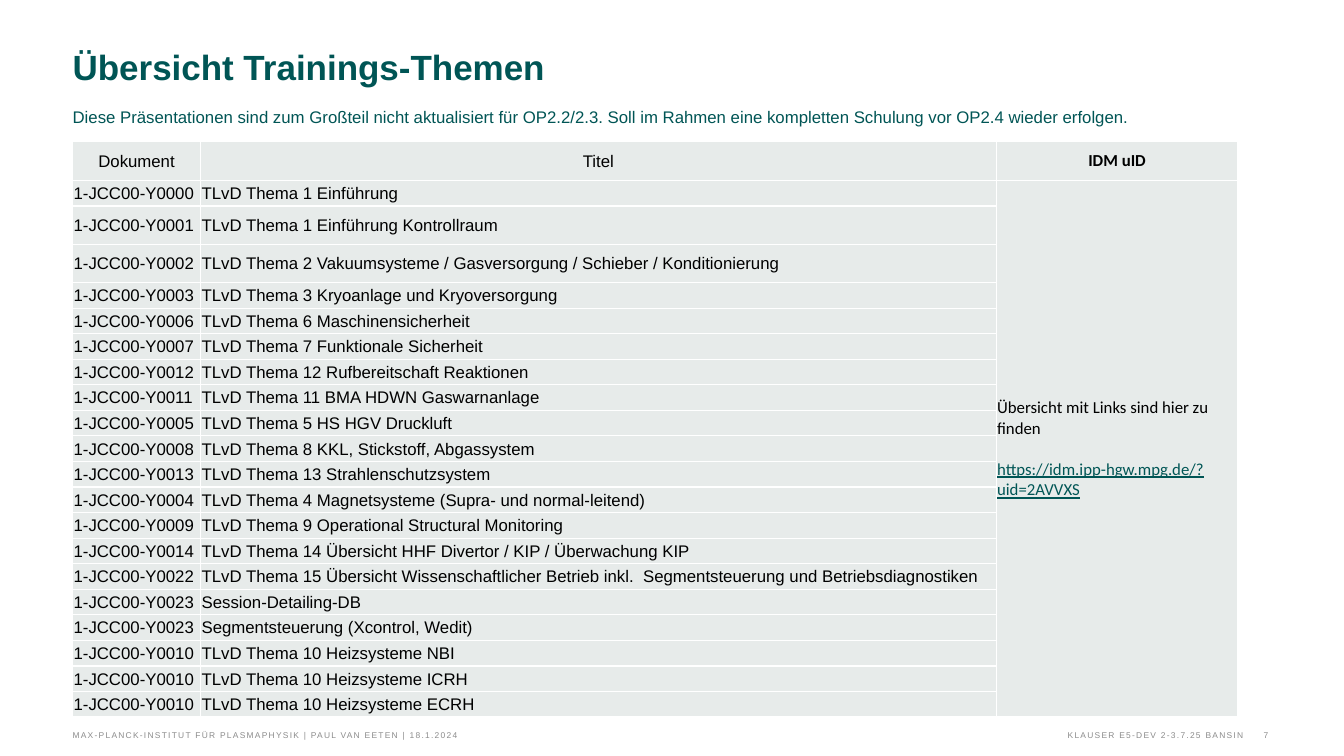
from lxml import etree
from pptx import Presentation
from pptx.dml.color import RGBColor
from pptx.enum.text import MSO_ANCHOR as Anchor, PP_ALIGN as Align
from pptx.oxml.ns import qn
from pptx.util import Inches, Pt

# Content
TITLE = "Übersicht Trainings-Themen"
SUBTITLE = ("Diese Präsentationen sind zum Großteil nicht aktualisiert für OP2.2/2.3. "
            "Soll im Rahmen eine kompletten Schulung vor OP2.4 wieder erfolgen.")
HEADERS = ["Dokument", "Titel", "IDM uID"]
TOPICS = [
    ("1-JCC00-Y0000", "TLvD Thema 1 Einführung"),
    ("1-JCC00-Y0001", "TLvD Thema 1 Einführung Kontrollraum"),
    ("1-JCC00-Y0002", "TLvD Thema 2 Vakuumsysteme / Gasversorgung / Schieber / Konditionierung"),
    ("1-JCC00-Y0003", "TLvD Thema 3 Kryoanlage und Kryoversorgung"),
    ("1-JCC00-Y0006", "TLvD Thema 6 Maschinensicherheit"),
    ("1-JCC00-Y0007", "TLvD Thema 7 Funktionale Sicherheit"),
    ("1-JCC00-Y0012", "TLvD Thema 12 Rufbereitschaft Reaktionen"),
    ("1-JCC00-Y0011", "TLvD Thema 11 BMA HDWN Gaswarnanlage"),
    ("1-JCC00-Y0005", "TLvD Thema 5 HS HGV Druckluft"),
    ("1-JCC00-Y0008", "TLvD Thema 8 KKL, Stickstoff, Abgassystem"),
    ("1-JCC00-Y0013", "TLvD Thema 13 Strahlenschutzsystem"),
    ("1-JCC00-Y0004", "TLvD Thema 4 Magnetsysteme (Supra- und normal-leitend)"),
    ("1-JCC00-Y0009", "TLvD Thema 9 Operational Structural Monitoring"),
    ("1-JCC00-Y0014", "TLvD Thema 14 Übersicht HHF Divertor / KIP / Überwachung KIP"),
    ("1-JCC00-Y0022", "TLvD Thema 15 Übersicht Wissenschaftlicher Betrieb inkl.  "
                      "Segmentsteuerung und Betriebsdiagnostiken"),
    ("1-JCC00-Y0023", "Session-Detailing-DB"),
    ("1-JCC00-Y0023", "Segmentsteuerung (Xcontrol, Wedit)"),
    ("1-JCC00-Y0010", "TLvD Thema 10 Heizsysteme NBI"),
    ("1-JCC00-Y0010", "TLvD Thema 10 Heizsysteme ICRH"),
    ("1-JCC00-Y0010", "TLvD Thema 10 Heizsysteme ECRH"),
]
LINK_NOTE = "Übersicht mit Links sind hier zu finden"
LINK = "https://idm.ipp-hgw.mpg.de/?uid=2AVVXS"
FOOTERS = [  # text, left, width, alignment
    ("KLAUSER E5-DEV 2-3.7.25 BANSIN", 4.43, 7.9, Align.RIGHT),
    ("MAX-PLANCK-INSTITUT FÜR PLASMAPHYSIK | PAUL VAN EETEN | 18.1.2024", 0.72, 6.69, Align.LEFT),
    ("7", 12.34, 0.24, Align.RIGHT),
]

# Format
GREEN = RGBColor(0x00, 0x55, 0x55)
GRAY = RGBColor(0x8C, 0x8C, 0x8C)
BLACK = RGBColor(0, 0, 0)
CELL_FILL = RGBColor(0xE7, 0xEB, 0xEA)
TEXT = {"name": "Arial", "size": Pt(12), "bold": False}
CALIBRI = {**TEXT, "name": "Calibri"}
NO_MARGINS = dict.fromkeys(("margin_left", "margin_top", "margin_right", "margin_bottom"), 0)
CELL_FORMAT = {
    "margin_left": Inches(0.01), "margin_top": Inches(0.01), "margin_right": Inches(0.01),
    "margin_bottom": 0, "vertical_anchor": Anchor.MIDDLE,
}

# Table layout
LEFT, TOP, HEIGHT = 0.72, 1.4, 5.72
COLUMN_WIDTHS = [1.27, 7.89, 2.4]
HEADER_HEIGHT, TALL_HEIGHT, TALL_ROWS = 0.39, 0.38, (2, 3)
ROW_HEIGHT = ((HEIGHT - HEADER_HEIGHT - TALL_HEIGHT * len(TALL_ROWS))
              / (len(TOPICS) - len(TALL_ROWS)))


def apply(target, values):
    for name, value in values.items():
        setattr(target, name, value)


def add_run(paragraph, text, color, values):
    run = paragraph.add_run()
    run.text = text
    apply(run.font, values)
    run.font.color.rgb = color
    return run


def add_box(slide, left, top, width, height, anchor):
    frame = slide.shapes.add_textbox(*map(Inches, (left, top, width, height))).text_frame
    apply(frame, {**NO_MARGINS, "word_wrap": True, "vertical_anchor": anchor})
    return frame.paragraphs[0]


def style_cell(cell):
    apply(cell, CELL_FORMAT)
    properties = cell._tc.get_or_add_tcPr()
    for side in ("a:lnL", "a:lnR", "a:lnT", "a:lnB"):
        line = etree.SubElement(properties, qn(side), w=str(Pt(1)))
        fill = etree.SubElement(line, qn("a:solidFill"))
        etree.SubElement(fill, qn("a:srgbClr"), val="FFFFFF")
    cell.fill.solid()
    cell.fill.fore_color.rgb = CELL_FILL


def add_topic_table(slide):
    row_count = len(TOPICS) + 1
    frame = slide.shapes.add_table(row_count, len(HEADERS), Inches(LEFT), Inches(TOP),
                                   Inches(sum(COLUMN_WIDTHS)), Inches(HEIGHT))
    table = frame.table
    apply(table, {"first_row": False, "horz_banding": False})
    for column, width in zip(table.columns, COLUMN_WIDTHS):
        column.width = Inches(width)
    for index, row in enumerate(table.rows):
        height = TALL_HEIGHT if index in TALL_ROWS else ROW_HEIGHT
        row.height = Inches(height if index else HEADER_HEIGHT)
    for cell in table.iter_cells():
        style_cell(cell)
    table.cell(1, 2).merge(table.cell(row_count - 1, 2))

    # Header and topic rows
    for column, text in enumerate(HEADERS):
        paragraph = table.cell(0, column).text_frame.paragraphs[0]
        paragraph.alignment = Align.CENTER
        add_run(paragraph, text, BLACK, {**CALIBRI, "bold": True} if column == 2 else TEXT)
    for row, topic in enumerate(TOPICS, 1):
        for column, text in enumerate(topic):
            add_run(table.cell(row, column).text_frame.paragraphs[0], text, BLACK, TEXT)

    # Merged link cell
    link_frame = table.cell(1, 2).text_frame
    add_run(link_frame.paragraphs[0], LINK_NOTE, BLACK, CALIBRI)
    paragraph = link_frame.add_paragraph()
    paragraph.space_before = Pt(14.6)
    add_run(paragraph, LINK, GREEN, {**CALIBRI, "underline": True})


def main():
    presentation = Presentation()
    apply(presentation, {"slide_width": Inches(13.33), "slide_height": Inches(7.5)})
    slide = presentation.slides.add_slide(presentation.slide_layouts[6])

    # Footer
    for text, left, width, alignment in FOOTERS:
        paragraph = add_box(slide, left, 7.18, width, 0.16, Anchor.BOTTOM)
        paragraph.alignment = alignment
        run = add_run(paragraph, text, GRAY, {**TEXT, "size": Pt(6)})
        run.font._element.set("spc", "90")

    # Title
    paragraph = add_box(slide, LEFT, 0.48, 10.51, 0.86, Anchor.TOP)
    apply(paragraph, {"line_spacing": Pt(28), "space_after": Pt(18)})
    add_run(paragraph, TITLE, GREEN, {**TEXT, "size": Pt(25), "bold": True})
    paragraph.add_line_break()
    add_run(paragraph, SUBTITLE, GREEN, TEXT)

    add_topic_table(slide)
    presentation.save("out.pptx")


if __name__ == "__main__":
    main()
